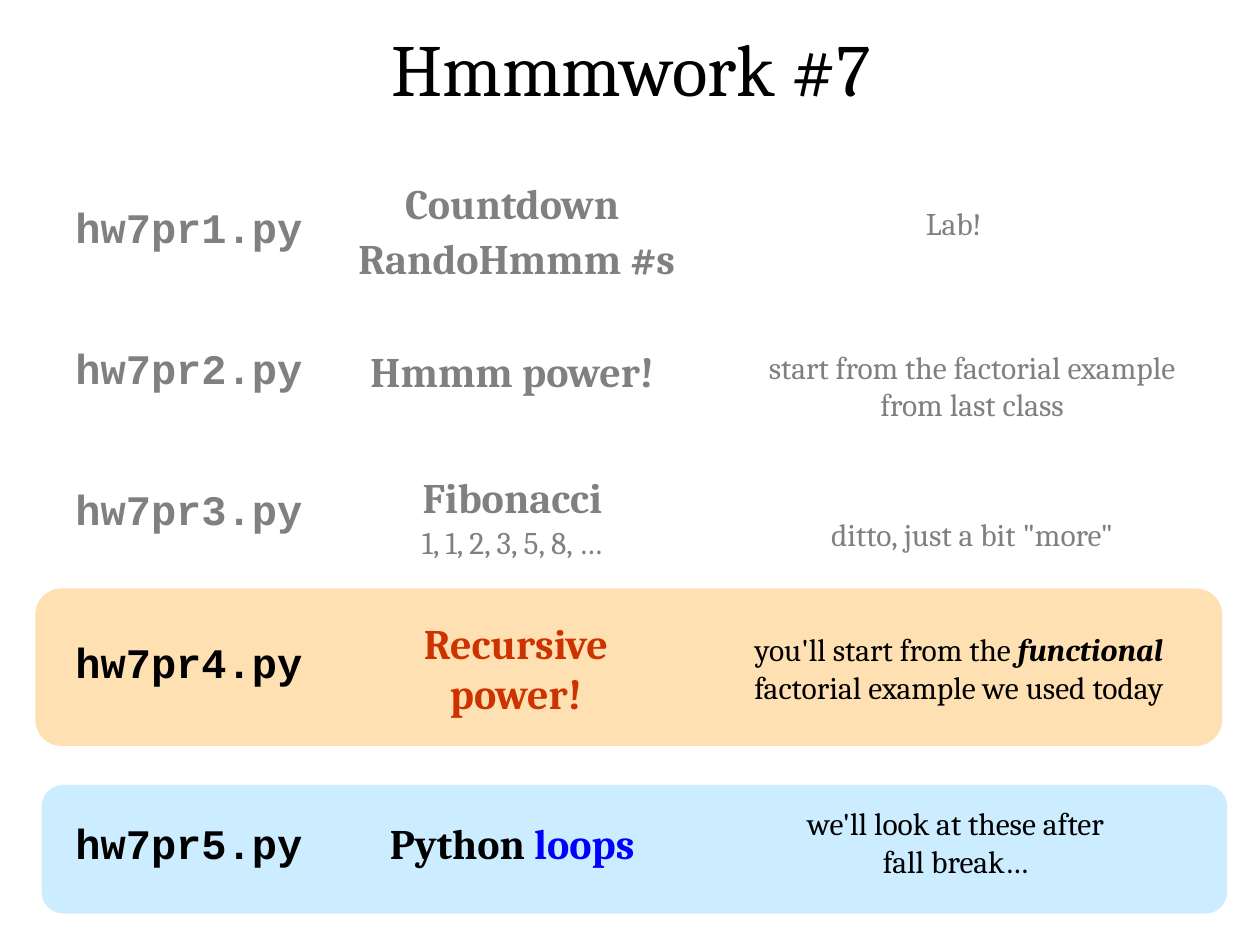
from dataclasses import dataclass

from pptx import Presentation
from pptx.dml.color import RGBColor
from pptx.enum.shapes import MSO_SHAPE
from pptx.enum.text import MSO_AUTO_SIZE, PP_ALIGN
from pptx.util import Inches, Pt

ROUNDED = MSO_SHAPE.ROUNDED_RECTANGLE
FIT = MSO_AUTO_SIZE.SHAPE_TO_FIT_TEXT
LEFT, CENTER = PP_ALIGN.LEFT, PP_ALIGN.CENTER


@dataclass(frozen=True)
class Theme:
    serif: str = "Cambria"
    mono: str = "Courier New"
    title: int = 42
    heading: int = 24
    note: int = 18
    black: str = "000000"
    gray: str = "808080"
    red: str = "CC3300"
    blue: str = "0000FF"
    orange_band: str = "FFE0B3"
    blue_band: str = "CCECFF"


T = Theme()
TITLE = {"name": T.serif, "size": Pt(T.title)}
FILE = {"name": T.mono, "size": Pt(T.heading), "bold": True}
TOPIC = {"name": T.serif, "size": Pt(T.heading), "bold": True}
NOTE = {"name": T.serif, "size": Pt(T.note)}
STRESSED = {**NOTE, "bold": True, "italic": True}


def add_text(s, box, runs, align=CENTER):
    sp = s.shapes.add_textbox(*map(Inches, box))
    tf = sp.text_frame
    tf.word_wrap = True
    tf.auto_size = FIT
    p = tf.paragraphs[0]
    p.alignment = align
    for text, style, color in runs:
        r = p.add_run()
        r.text = text
        for key, value in style.items():
            setattr(r.font, key, value)
        r.font.color.rgb = RGBColor.from_string(color)


def add_band(s, box, color):
    sp = s.shapes.add_shape(ROUNDED, *map(Inches, box))
    sp.shadow.inherit = False
    sp.fill.solid()
    sp.fill.fore_color.rgb = RGBColor.from_string(color)
    sp.line.fill.background()


def add_title(s, box, text):
    add_text(s, box, [(text, TITLE, T.black)])


def add_problem(s, box, file, color, parts):
    x, y, w, h = box
    add_text(s, (x, y, 2.92, h), [(file, FILE, color)], LEFT)
    for (dx, dy, width, height), runs in parts:
        add_text(s, (x + dx, y + dy, width, height), runs)


TOPIC_BOX = (2.22, 0, 2.69, 0.5)

PROBLEMS = [
    (1.55, "hw7pr1.py", T.gray, [
        ((2.22, -0.19, 2.69, 0.5), [("Countdown", TOPIC, T.gray)]),
        ((2.09, 0.25, 3.02, 0.5), [("RandoHmmm #s", TOPIC, T.gray)]),
        ((6.1, 0.02, 1.94, 0.4), [("Lab!", NOTE, T.gray)]),
    ]),
    (2.67, "hw7pr2.py", T.gray, [
        ((2.22, 0.02, 2.69, 0.5), [("Hmmm power!", TOPIC, T.gray)]),
        ((5.34, 0.04, 3.75, 0.7),
         [("start from the factorial example from last class", NOTE, T.gray)]),
    ]),
    (3.79, "hw7pr3.py", T.gray, [
        ((2.22, -0.1, 2.69, 0.5), [("Fibonacci", TOPIC, T.gray)]),
        ((1.98, 0.31, 3.17, 0.4), [("1, 1, 2, 3, 5, 8, …", NOTE, T.gray)]),
        ((5.34, 0.25, 3.75, 0.4), [('ditto, just a bit "more"', NOTE, T.gray)]),
    ]),
    (5, "hw7pr4.py", T.black, [
        ((2.43, -0.15, 2.33, 0.91), [("Recursive power!", TOPIC, T.red)]),
        ((5.14, -0.05, 3.94, 0.71),
         [("you'll start from the ", NOTE, T.black),
          ("functional ", STRESSED, T.black),
          ("factorial example we used today", NOTE, T.black)]),
    ]),
    (6.44, "hw7pr5.py", T.black, [
        (TOPIC_BOX, [("Python ", TOPIC, T.black), ("loops", TOPIC, T.blue)]),
        ((5.67, -0.11, 2.83, 0.71),
         [("we'll look at these after fall break…", NOTE, T.black)]),
    ]),
]


def main():
    prs = Presentation()
    prs.slide_width, prs.slide_height = Inches(10), Inches(7.5)
    s = prs.slides.add_slide(prs.slide_layouts[6])
    add_band(s, (0.28, 4.67, 9.42, 1.25), T.orange_band)
    add_band(s, (0.33, 6.23, 9.41, 1.02), T.blue_band)
    add_title(s, (0.28, 0.13, 9.46, 0.8), "Hmmmwork #7")
    for y, file, color, parts in PROBLEMS:
        add_problem(s, (0.5, y, 9.09, 0.5), file, color, parts)
    prs.save("out.pptx")


if __name__ == "__main__":
    main()
